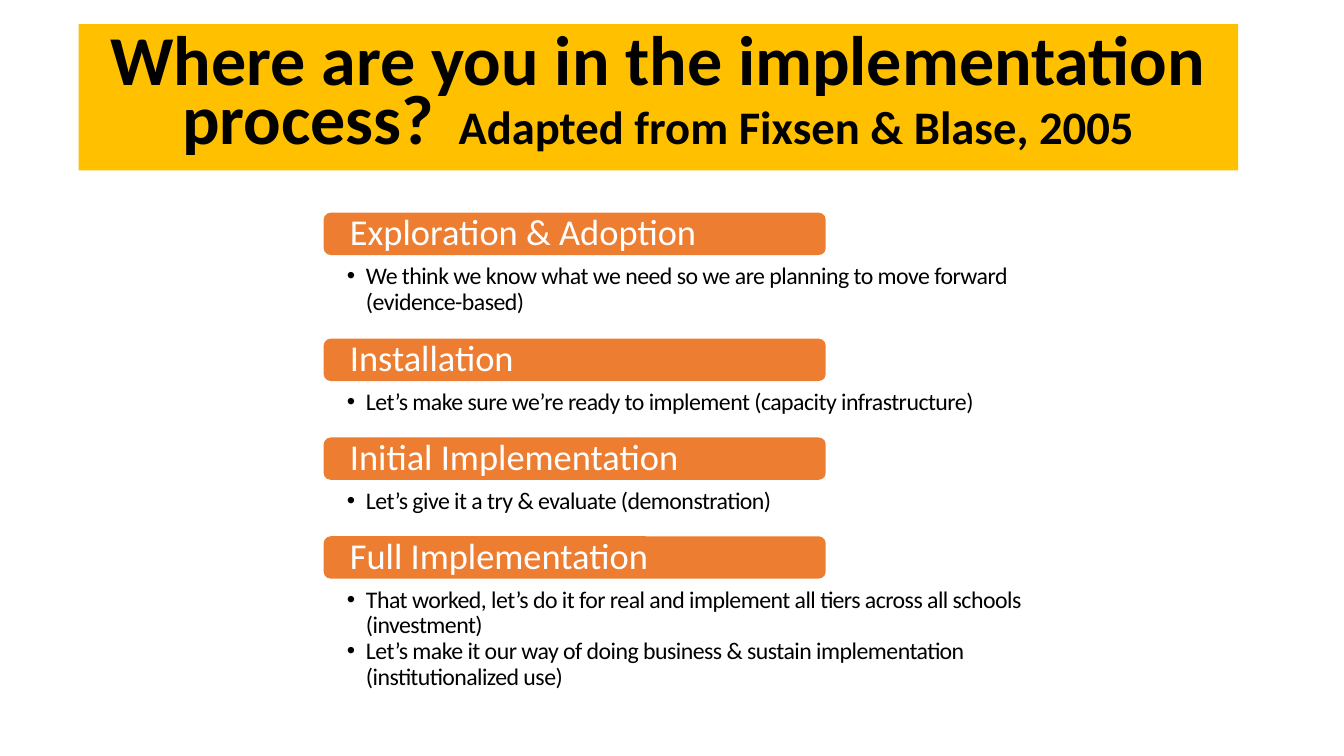
from lxml import etree
from pptx import Presentation
from pptx.dml.color import RGBColor
from pptx.enum.shapes import MSO_SHAPE
from pptx.enum.text import MSO_ANCHOR, MSO_AUTO_SIZE, PP_ALIGN
from pptx.oxml.ns import qn
from pptx.util import Emu, Pt

RECT, ROUNDED = MSO_SHAPE.RECTANGLE, MSO_SHAPE.ROUNDED_RECTANGLE
TOP, MIDDLE = MSO_ANCHOR.TOP, MSO_ANCHOR.MIDDLE
LEFT, CENTER = PP_ALIGN.LEFT, PP_ALIGN.CENTER
NO_FIT = MSO_AUTO_SIZE.NONE
TITLE_ONLY = 5

EMU_PER_PX = 9144  # 100 px to the inch
FONT = "Calibri"
BLACK, WHITE, GOLD, ORANGE = "000000", "FFFFFF", "FFC000", "ED7D31"

TITLE_RUNS = [
    ("Where are you in the implementation process? ", 50),
    (" ", 25.9),
    ("Adapted from Fixsen & Blase, 2005", 33.3),
]
# Stage name, panel height, bullets
STAGES = [
    ("Exploration & Adoption", 96,
     ["We think we know what we need so we are planning to move forward (evidence-based)"]),
    ("Installation", 69,
     ["Let’s make sure we’re ready to implement (capacity infrastructure)"]),
    ("Initial Implementation", 69,
     ["Let’s give it a try & evaluate (demonstration)"]),
    ("Full Implementation", 148,
     ["That worked, let’s do it for real and implement all tiers across all schools (investment)",
      "Let’s make it our way of doing business & sustain implementation (institutionalized use)"]),
]
FIRST_PANEL_TOP, PANEL_GAP = 232, 29
PANEL_LEFT, PANEL_WIDTH = 279, 836
BAR_LEFT, BAR_WIDTH, BAR_HEIGHT, BAR_RISE = 321, 498, 42, 21
PANEL_INSETS = (65, 30, 65, 13)
BAR_INSETS = (24, 0, 24, 0)
BULLET_INDENT = 19


def px(length):
    return Emu(length * EMU_PER_PX)


def rgb(hex_color):
    return RGBColor.from_string(hex_color)


def set_attributes(target, values):
    for name, value in values.items():
        setattr(target, name, value)


def fill_solid(shape, color):
    shape.fill.solid()
    shape.fill.fore_color.rgb = rgb(color)


def add_block(slide, kind, box, color, insets, anchor):
    """Add a filled shape without outline or shadow, ready for text."""
    block = slide.shapes.add_shape(kind, *map(px, box))
    block.shadow.inherit = False
    block.line.fill.background()
    fill_solid(block, color)
    sides = ("margin_left", "margin_top", "margin_right", "margin_bottom")
    set_attributes(block.text_frame, {
        **dict(zip(sides, map(px, insets))),
        "word_wrap": True, "vertical_anchor": anchor,
    })
    return block


def add_run(paragraph, text, size, color, bold=False):
    run = paragraph.add_run()
    run.text = text
    set_attributes(run.font, {"name": FONT, "size": Pt(size), "bold": bold})
    run.font.color.rgb = rgb(color)
    return run


def make_bullet(paragraph):
    properties = paragraph._p.get_or_add_pPr()
    properties.set("marL", str(px(BULLET_INDENT)))
    properties.set("indent", str(-px(BULLET_INDENT)))
    etree.SubElement(properties, qn("a:buFont")).set("typeface", "Arial")
    etree.SubElement(properties, qn("a:buChar")).set("char", "•")


def set_title(slide):
    title = slide.shapes.title
    set_attributes(title, {"left": px(78), "top": px(24), "width": px(1150), "height": px(145)})
    fill_solid(title, GOLD)
    set_attributes(title.text_frame, {
        "word_wrap": True, "auto_size": NO_FIT, "vertical_anchor": MIDDLE,
    })
    heading = title.text_frame.paragraphs[0]
    set_attributes(heading, {"alignment": CENTER, "line_spacing": 0.7, "space_before": Pt(0)})
    for text, size in TITLE_RUNS:
        add_run(heading, text, size, BLACK, bold=True)


def add_bullet_panel(slide, top, height, bullets):
    panel = add_block(slide, RECT, (PANEL_LEFT, top, PANEL_WIDTH, height),
                      WHITE, PANEL_INSETS, TOP)
    panel_color = panel._element.spPr.find(qn("a:solidFill"))[0]
    etree.SubElement(panel_color, qn("a:alpha")).set("val", "90000")
    for index, text in enumerate(bullets):
        frame = panel.text_frame
        bullet = frame.add_paragraph() if index else frame.paragraphs[0]
        set_attributes(bullet, {"level": 1, "alignment": LEFT, "line_spacing": 0.9})
        make_bullet(bullet)
        run = add_run(bullet, text, 17, BLACK)
        run.font._element.set("spc", "-40")


def add_stage_bar(slide, top, name):
    bar = add_block(slide, ROUNDED, (BAR_LEFT, top, BAR_WIDTH, BAR_HEIGHT),
                    ORANGE, BAR_INSETS, MIDDLE)
    label = bar.text_frame.paragraphs[0]
    set_attributes(label, {"alignment": LEFT, "line_spacing": 0.9})
    add_run(label, name, 26, WHITE)


def main():
    deck = Presentation()
    set_attributes(deck, {"slide_width": px(1333), "slide_height": px(750)})
    slide = deck.slides.add_slide(deck.slide_layouts[TITLE_ONLY])
    set_title(slide)
    panel_top = FIRST_PANEL_TOP
    for name, height, bullets in STAGES:
        add_bullet_panel(slide, panel_top, height, bullets)
        add_stage_bar(slide, panel_top - BAR_RISE, name)
        panel_top += height + PANEL_GAP
    deck.save("out.pptx")


if __name__ == "__main__":
    main()
